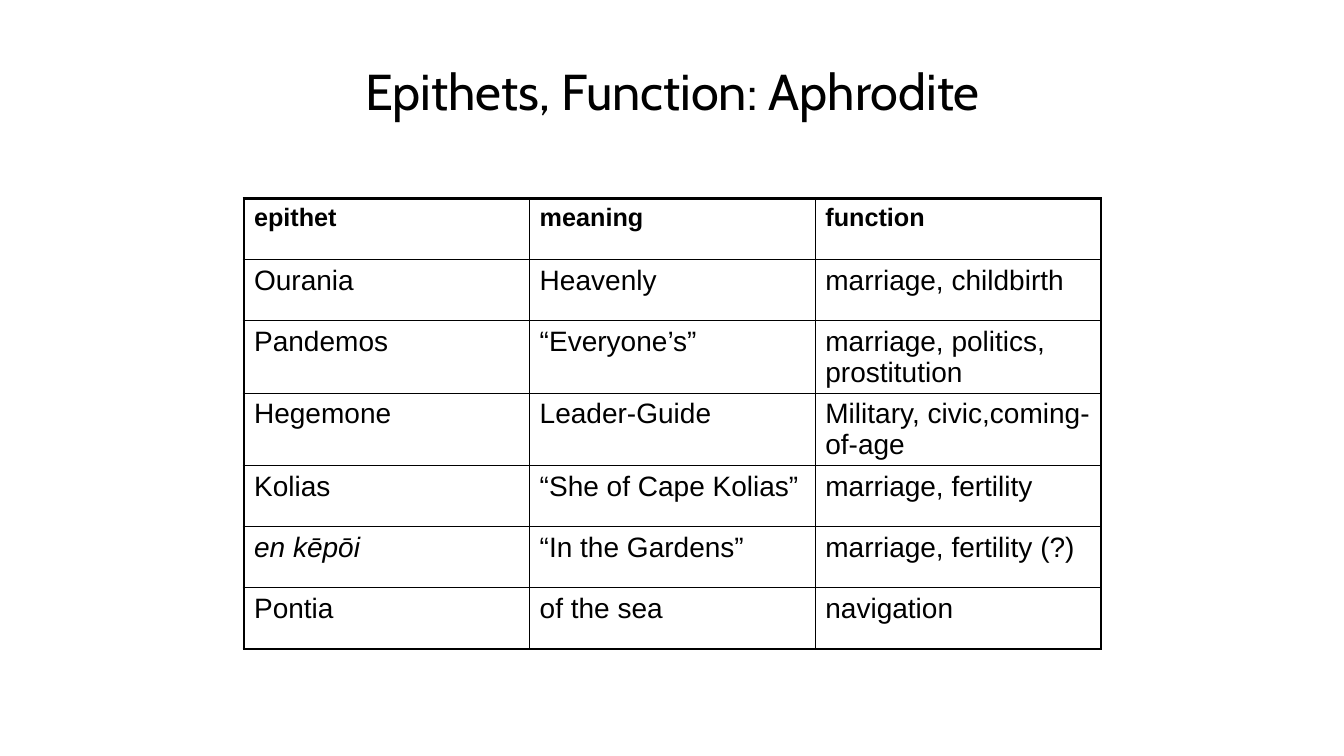
"""Build a slide with a table of Aphrodite's epithets."""
import pptx
import pptx.dml.color
import pptx.enum.text
import pptx.oxml
import pptx.oxml.ns
import pptx.util
from pptx.util import Inches

COLORS = {"text": "000000", "border": "000000", "background": "FFFFFF"}
THIN, THICK = 1, 2.25
ROWS = [
    ("epithet", "meaning", "function"),
    ("Ourania", "Heavenly", "marriage, childbirth"),
    ("Pandemos", "“Everyone’s”", "marriage, politics, prostitution"),
    ("Hegemone", "Leader-Guide", "Military, civic,coming-of-age"),
    ("Kolias", "“She of Cape Kolias”", "marriage, fertility"),
    ("en kēpōi", "“In the Gardens”", "marriage, fertility (?)"),
    ("Pontia", "of the sea", "navigation"),
]


def write(tf, text, font="Arial", size=20, bold=False, italic=False, align="LEFT"):
    p = tf.paragraphs[0]
    p.alignment = getattr(pptx.enum.text.PP_ALIGN, align)
    r = p.add_run()
    r.text = text
    r.font.name = font
    r.font.size = pptx.util.Pt(size)
    r.font.bold = bold
    r.font.italic = italic
    r.font.color.rgb = pptx.dml.color.RGBColor.from_string(COLORS["text"])


def add_border(cell, side, width):
    cell._tc.get_or_add_tcPr().append(pptx.oxml.parse_xml(
        f'<a:ln{side} {pptx.oxml.ns.nsdecls("a")} w="{pptx.util.Pt(width)}">'
        f'<a:solidFill><a:srgbClr val="{COLORS["border"]}"/></a:solidFill>'
        f'</a:ln{side}>'))


prs = pptx.Presentation()
prs.slide_width, prs.slide_height = Inches(13.33), Inches(7.5)
s = prs.slides.add_slide(prs.slide_layouts[5])
s.background.fill.solid()
s.background.fill.fore_color.rgb = pptx.dml.color.RGBColor.from_string(COLORS["background"])

title = s.shapes.title
title.left, title.top = Inches(0.67), Inches(0.08)
title.width, title.height = Inches(12), Inches(1.17)
tf = title.text_frame
tf.auto_size = pptx.enum.text.MSO_AUTO_SIZE.NONE
tf.vertical_anchor = pptx.enum.text.MSO_ANCHOR.BOTTOM
write(tf, "Epithets, Function: Aphrodite", font="Cabin", size=36, align="CENTER")

last_row, last_col = len(ROWS) - 1, len(ROWS[0]) - 1
table = s.shapes.add_table(len(ROWS), len(ROWS[0]), Inches(2.42), Inches(1.97),
                           Inches(8.5), Inches(4.24)).table
table.first_row = table.horz_banding = False
for i, row in enumerate(ROWS):
    for j, text in enumerate(row):
        cell = table.cell(i, j)
        write(cell.text_frame, text, size=18 if i == 0 else 20,
              bold=i == 0, italic=text == "en kēpōi")
        outer = {"L": j == 0, "R": j == last_col, "T": i == 0, "B": i == last_row}
        for side, is_outer in outer.items():
            add_border(cell, side, THICK if is_outer else THIN)
        cell.fill.background()

prs.save("out.pptx")
